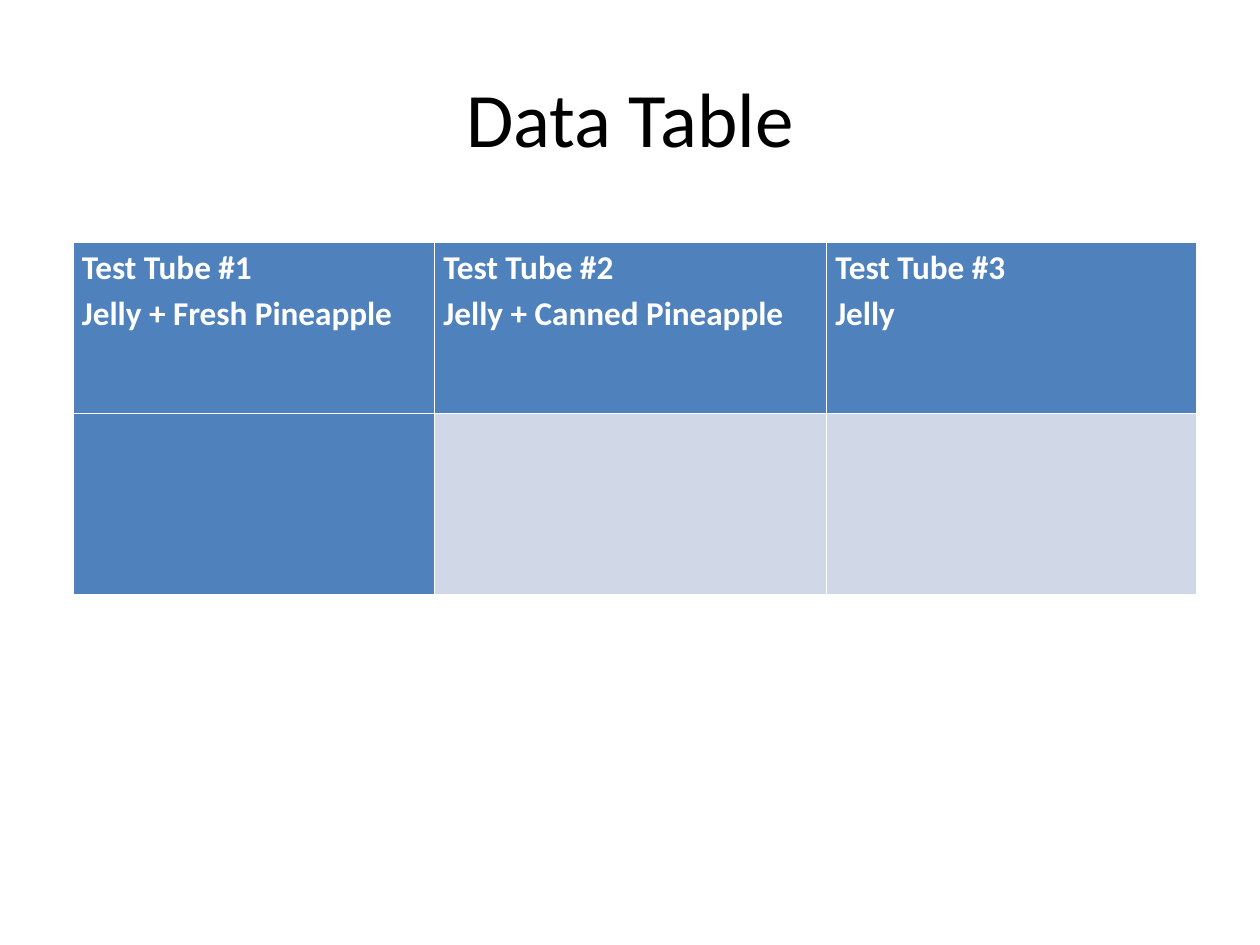
from pptx import Presentation
from pptx.dml.color import RGBColor
from pptx.enum.text import MSO_ANCHOR, PP_ALIGN
from pptx.util import Inches, Pt

COLORS = {"title": "000000", "header": "4F81BD", "header_text": "FFFFFF", "result": "D0D8E8"}
FONT = "Calibri"
TEST_TUBES = [
    ("Test Tube #1", "Jelly + Fresh Pineapple"),
    ("Test Tube #2", "Jelly + Canned Pineapple"),
    ("Test Tube #3", "Jelly"),
]
COLUMN_WIDTHS = [2.87, 3.11, 2.94]
ROW_HEIGHTS = [1.36, 1.44]


def color(name):
    """Return the named colour."""
    return RGBColor.from_string(COLORS[name])


def style_paragraph(para, size, color_name, bold=False):
    """Set the font of a whole paragraph."""
    para.font.name = FONT
    para.font.size = Pt(size)
    para.font.bold = bold
    para.font.color.rgb = color(color_name)


def place_title(page, left, top, width, height):
    """Fill and place the title placeholder."""
    title = page.shapes.title
    title.left, title.top = Inches(left), Inches(top)
    title.width, title.height = Inches(width), Inches(height)
    frame = title.text_frame
    frame.text = "Data Table"
    frame.vertical_anchor = MSO_ANCHOR.MIDDLE
    para = frame.paragraphs[0]
    para.alignment = PP_ALIGN.CENTER
    style_paragraph(para, 44, "title")


def fill_header(cell, lines):
    """Write the lines of one test tube into its header cell."""
    cell.text = "\n".join(lines)
    for para in cell.text_frame.paragraphs:
        para.line_spacing = 1.15
        style_paragraph(para, 19, "header_text", bold=True)


def place_table(page, left, top):
    """Add the table with a header row and an empty row for results."""
    frame = page.shapes.add_table(
        len(ROW_HEIGHTS), len(COLUMN_WIDTHS), Inches(left), Inches(top),
        Inches(sum(COLUMN_WIDTHS)), Inches(sum(ROW_HEIGHTS)))
    table = frame.table
    table.first_col = True
    for row, height in zip(table.rows, ROW_HEIGHTS):
        row.height = Inches(height)
    for index, (width, lines) in enumerate(zip(COLUMN_WIDTHS, TEST_TUBES)):
        table.columns[index].width = Inches(width)
        fill_header(table.cell(0, index), lines)
    for row_index, row in enumerate(table.rows):
        for column_index, cell in enumerate(row.cells):
            is_header = row_index == 0 or column_index == 0
            cell.fill.solid()
            cell.fill.fore_color.rgb = color("header" if is_header else "result")
            cell.margin_left = cell.margin_right = Inches(0.07)
            cell.margin_top = cell.margin_bottom = 0


def main():
    """Build the slide and save it."""
    deck = Presentation()
    deck.slide_width, deck.slide_height = Inches(10), Inches(7.5)
    page = deck.slides.add_slide(deck.slide_layouts[5])
    place_title(page, 0.5, 0.3, 9, 1.25)
    place_table(page, 0.58, 1.92)
    deck.save("out.pptx")


if __name__ == "__main__":
    main()
